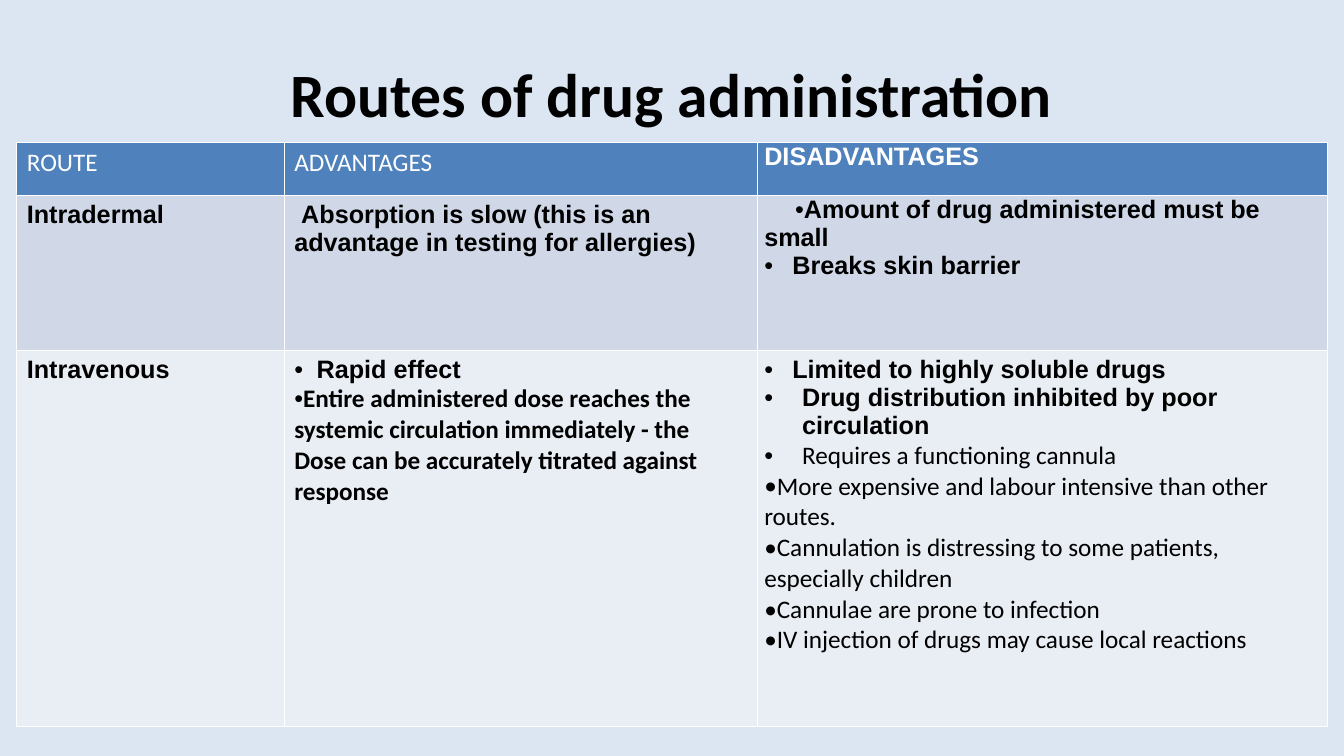
from dataclasses import dataclass

from lxml import etree
from pptx import Presentation
from pptx.dml.color import RGBColor
from pptx.enum.text import MSO_ANCHOR, PP_ALIGN
from pptx.oxml.ns import qn
from pptx.util import Pt

MIDDLE = MSO_ANCHOR.MIDDLE
CENTER = PP_ALIGN.CENTER
SANS = "Calibri"
ARIAL = "Arial"
WHITE = "FFFFFF"
BLACK = "000000"
BACKGROUND = "DCE6F2"
ROW_FILLS = ["4F81BD", "D0D8E8", "E9EDF4"]
COLUMN_WIDTHS = [191, 338, 407]
ROW_HEIGHTS = [37.5, 111, 268.5]
BORDER_TAGS = ["a:lnL", "a:lnR", "a:lnT", "a:lnB"]


@dataclass
class Line:
    text: str
    font: str = ARIAL
    bold: bool = True
    bullet_font: str = ""
    left: float = 0
    indent: float = 0


def bullet(text, hang, font=ARIAL, bold=True):
    return Line(text, font, bold, ARIAL, hang, -hang)


def plain_bullet(text):
    return Line(text, SANS, False, SANS)


ROUTES = [
    [
        [Line("ROUTE", SANS, False)],
        [Line("ADVANTAGES", SANS, False)],
        [Line("DISADVANTAGES")],
    ],
    [
        [Line("Intradermal")],
        [Line("Absorption is slow (this is an advantage in testing for allergies)", indent=5)],
        [
            Line("Amount of drug administered must be small", bullet_font=ARIAL, indent=22),
            bullet("Breaks skin barrier", 20),
        ],
    ],
    [
        [Line("Intravenous")],
        [
            bullet("Rapid effect", 16),
            Line("Entire administered dose reaches the systemic circulation immediately - the",
                 SANS, bullet_font=ARIAL),
            Line("Dose can be accurately titrated against response", SANS),
        ],
        [
            bullet("Limited to highly soluble drugs", 20),
            bullet("Drug distribution inhibited by poor circulation", 27),
            bullet("Requires a functioning cannula", 27, SANS, False),
            plain_bullet("More expensive and labour intensive than other routes."),
            plain_bullet("Cannulation is distressing to some patients, especially children"),
            plain_bullet("Cannulae are prone to infection"),
            plain_bullet("IV injection of drugs may cause local reactions"),
        ],
    ],
]


def color(value):
    return RGBColor.from_string(value)


class SlideBuilder:
    """Holds the current slide and draws styled elements on it."""

    def __init__(self, slide, text_size=18, border_width=1):
        self.slide = slide
        self.text_size = text_size
        self.border_width = border_width

    def background(self, fill):
        self.slide.background.fill.solid()
        self.slide.background.fill.fore_color.rgb = color(fill)

    def format_runs(self, paragraph, font, size, bold, text_color):
        for run in paragraph.runs:
            run.font.name = font
            run.font.size = Pt(size)
            run.font.bold = bold
            run.font.color.rgb = color(text_color)

    def title(self, text, left, top, width, height, size):
        shape = self.slide.shapes.title
        shape.left, shape.top = Pt(left), Pt(top)
        shape.width, shape.height = Pt(width), Pt(height)
        shape.text_frame.text = text
        shape.text_frame.vertical_anchor = MIDDLE
        paragraph = shape.text_frame.paragraphs[0]
        paragraph.alignment = CENTER
        self.format_runs(paragraph, SANS, size, True, BLACK)

    def paragraph(self, paragraph, line, text_color):
        paragraph.text = line.text
        self.format_runs(paragraph, line.font, self.text_size, line.bold, text_color)
        properties = paragraph._p.get_or_add_pPr()
        properties.set("marL", str(Pt(line.left)))
        properties.set("indent", str(Pt(line.indent)))
        if line.bullet_font:
            etree.SubElement(properties, qn("a:buFont")).set("typeface", line.bullet_font)
            etree.SubElement(properties, qn("a:buChar")).set("char", "•")

    def borders(self, cell):
        properties = cell._tc.get_or_add_tcPr()
        for position, tag in enumerate(BORDER_TAGS):
            border = etree.Element(qn(tag), w=str(Pt(self.border_width)))
            fill = etree.SubElement(border, qn("a:solidFill"))
            etree.SubElement(fill, qn("a:srgbClr")).set("val", WHITE)
            properties.insert(position, border)

    def cell(self, cell, lines, fill, text_color, side_margin, top_margin):
        cell.fill.solid()
        cell.fill.fore_color.rgb = color(fill)
        cell.margin_left = cell.margin_right = Pt(side_margin)
        cell.margin_top = cell.margin_bottom = Pt(top_margin)
        self.borders(cell)
        frame = cell.text_frame
        for index, line in enumerate(lines):
            paragraph = frame.add_paragraph() if index else frame.paragraphs[0]
            self.paragraph(paragraph, line, text_color)

    def table(self, rows, left, top):
        table = self.slide.shapes.add_table(
            len(rows), len(COLUMN_WIDTHS), Pt(left), Pt(top),
            Pt(sum(COLUMN_WIDTHS)), Pt(sum(ROW_HEIGHTS))).table
        for column, width in zip(table.columns, COLUMN_WIDTHS):
            column.width = Pt(width)
        for row, height in zip(table.rows, ROW_HEIGHTS):
            row.height = Pt(height)
        last_row, last_column = len(rows) - 1, len(COLUMN_WIDTHS) - 1
        for row_index, row in enumerate(rows):
            for column_index, lines in enumerate(row):
                narrow = column_index == last_column
                self.cell(
                    table.cell(row_index, column_index), lines, ROW_FILLS[row_index],
                    BLACK if row_index else WHITE,
                    side_margin=5 if narrow else 7.2,
                    top_margin=0 if narrow and row_index < last_row else 3.6)


def main():
    presentation = Presentation()
    presentation.slide_width, presentation.slide_height = Pt(960), Pt(540)
    slide = presentation.slides.add_slide(presentation.slide_layouts[5])
    builder = SlideBuilder(slide)
    builder.background(BACKGROUND)
    builder.title("Routes of drug administration", 48, 21.6, 864, 90, 44)
    builder.table(ROUTES, 12, 102)
    presentation.save("out.pptx")


if __name__ == "__main__":
    main()
